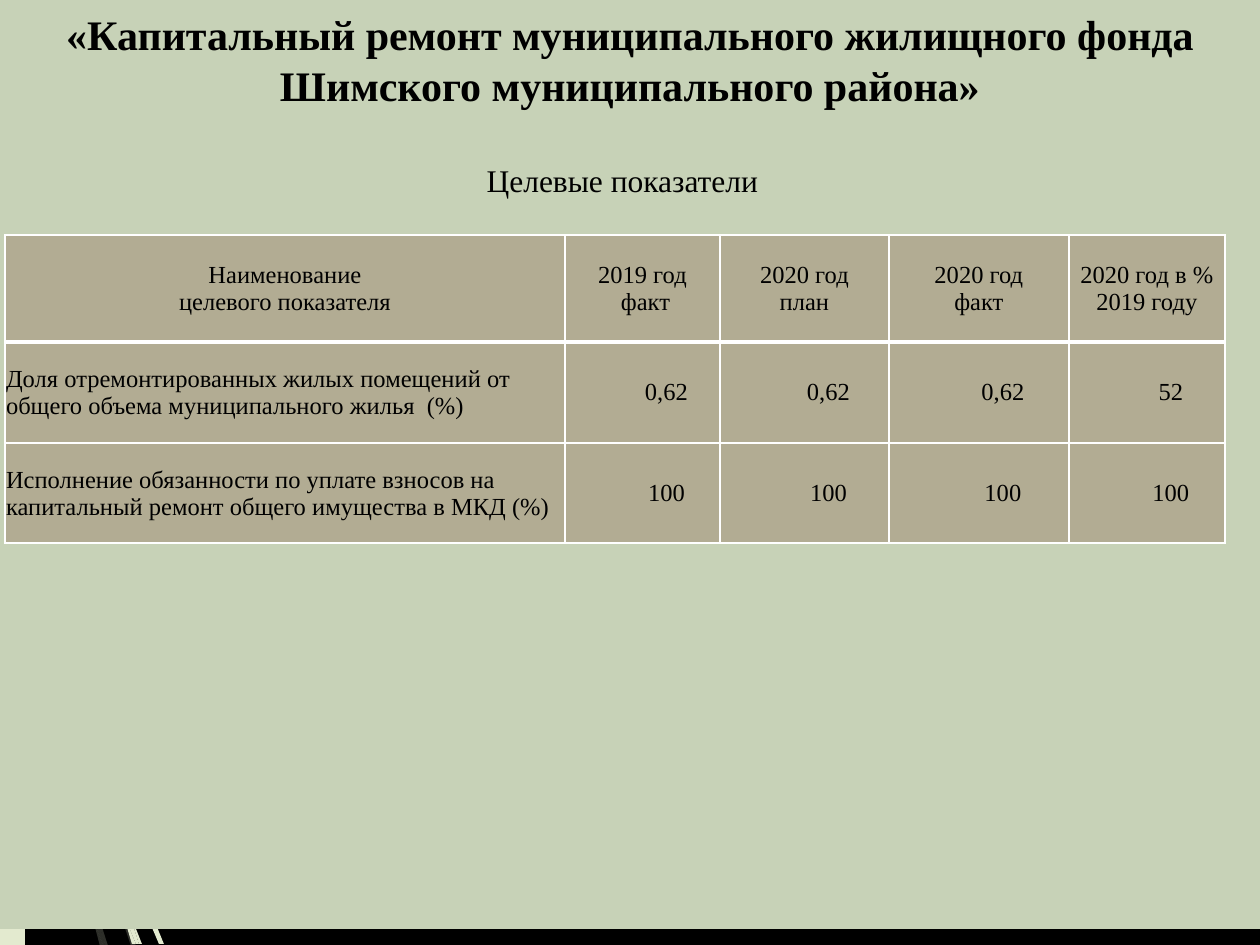
from lxml import etree
from pptx import Presentation
from pptx import util as u
from pptx.dml.color import RGBColor
from pptx.enum import text
from pptx.enum.shapes import MSO_SHAPE
from pptx.oxml.ns import qn

PX = u.Inches(1) // 126
FONT = "Times New Roman"
BLACK = RGBColor(0x00, 0x00, 0x00)
WHITE = RGBColor(0xFF, 0xFF, 0xFF)
CREAM = RGBColor(0xE3, 0xEA, 0xCF)
SAGE = RGBColor(0xC7, 0xD2, 0xB7)
TAUPE = RGBColor(0xB2, 0xAC, 0x93)

TITLE = "«Капитальный ремонт муниципального жилищного фонда Шимского муниципального района»"
COLUMNS = (560, 155, 169, 180, 156)
ROWS = (107, 101, 100)
TABLE = (
    ("Наименование\vцелевого показателя", "2019 год\v факт", "2020 год\nплан",
     "2020 год\nфакт", "2020 год в % 2019 году"),
    ("Доля отремонтированных жилых помещений от общего объема муниципального жилья  (%)",
     "0,62", "0,62", "0,62", "52"),
    ("Исполнение обязанности по уплате взносов на капитальный ремонт общего имущества в МКД (%)",
     "100", "100", "100", "100"),
)
FAINT_BLADES = (
    ((81, 765), (77, 751), (77, 769), (107, 874), (131, 946), (136, 946), (111, 872)),
    ((105, 946), (108, 946), (92, 896)),
    ((88, 900), (100, 946), (103, 946)),
    ((84, 872), (82, 861), (87, 891), (88, 900), (103, 946), (105, 946), (92, 896)),
)
BRIGHT_BLADES = (
    ((118, 818), (115, 808), (115, 827), (137, 892), (159, 944), (164, 944), (142, 890)),
    ((139, 944), (142, 944), (127, 906)),
    ((122, 910), (132, 944), (136, 944)),
    ((121, 890), (115, 871), (121, 903), (122, 910), (136, 944), (139, 944), (127, 906)),
)


def px(*values):
    return [value * PX for value in values]


def paint(shape, color, opacity=100):
    shape.shadow.inherit = False
    shape.line.fill.background()
    shape.fill.solid()
    shape.fill.fore_color.rgb = color
    if opacity < 100:
        srgb = shape.element.spPr.find(qn("a:solidFill"))[0]
        etree.SubElement(srgb, qn("a:alpha"), val=str(opacity * 1000))


def format_text(frame, size, bold=False, align=text.PP_ALIGN.CENTER):
    frame.word_wrap = True
    for para in frame.paragraphs:
        para.alignment = align
        para.font.name = FONT
        para.font.size = u.Pt(size)
        para.font.bold = bold
        para.font.color.rgb = BLACK


def add_blade(page, points, opacity):
    builder = page.shapes.build_freeform(*points[0], scale=PX)
    builder.add_line_segments(points[1:], close=True)
    paint(builder.convert_to_shape(), CREAM, opacity)


def add_decoration(page):
    for blades, opacity in ((FAINT_BLADES, 20), (BRIGHT_BLADES, 100)):
        for points in blades:
            add_blade(page, points, opacity)
    paint(page.shapes.add_shape(MSO_SHAPE.RECTANGLE, *px(0, 0, 25, 945)), CREAM)


def add_title(page):
    """Fill the title panel and lift it above the decoration."""
    title = page.shapes.title
    title.left, title.top, title.width, title.height = px(0, 0, 1260, 929)
    title.fill.solid()
    title.fill.fore_color.rgb = SAGE
    frame = title.text_frame
    frame.text = TITLE
    frame.auto_size = text.MSO_AUTO_SIZE.NONE
    frame.vertical_anchor = text.MSO_ANCHOR.TOP
    frame.margin_top = 9 * PX
    format_text(frame, 24, bold=True)
    title.element.getparent().append(title.element)


def set_borders(cell, widths):
    """Draw white borders; widths are points for left, right, top and bottom."""
    properties = cell._tc.get_or_add_tcPr()
    for index, (side, width) in enumerate(zip("LRTB", widths)):
        line = etree.Element(qn(f"a:ln{side}"), w=str(u.Pt(width)))
        fill = etree.SubElement(line, qn("a:solidFill"))
        etree.SubElement(fill, qn("a:srgbClr"), val=str(WHITE))
        properties.insert(index, line)


def format_cell(cell, row, column):
    is_value = row > 0 and column > 0
    cell.fill.solid()
    cell.fill.fore_color.rgb = TAUPE
    cell.vertical_anchor = text.MSO_ANCHOR.MIDDLE
    margins = (0, 0, 15, 0) if is_value else (1, 1, 1, 0)
    cell.margin_left, cell.margin_top, cell.margin_right, cell.margin_bottom = px(*margins)
    if is_value:
        para = cell.text_frame.paragraphs[0]
        para.level = 1
        properties = para._p.get_or_add_pPr()
        properties.set("marL", str(63 * PX))
        properties.set("indent", "0")
    is_name = row > 0 and column == 0
    format_text(cell.text_frame, 14,
                align=text.PP_ALIGN.LEFT if is_name else text.PP_ALIGN.CENTER)
    set_borders(cell, (1, 1, 3 if row == 1 else 1, 3 if row == 0 else 1))


def add_indicator_table(page):
    box = px(5, 235, sum(COLUMNS), sum(ROWS))
    table = page.shapes.add_table(len(ROWS), len(COLUMNS), *box).table
    for column, width in zip(table.columns, COLUMNS):
        column.width = width * PX
    for row, height in zip(table.rows, ROWS):
        row.height = height * PX
    for row, values in enumerate(TABLE):
        for column, value in enumerate(values):
            cell = table.cell(row, column)
            cell.text = value
            format_cell(cell, row, column)


def add_subtitle(page):
    box = page.shapes.add_textbox(*px(320, 155, 605, 50))
    box.text_frame.text = "Целевые показатели"
    format_text(box.text_frame, 18)


def main():
    deck = Presentation()
    deck.slide_width, deck.slide_height = px(1260, 945)
    page = deck.slides.add_slide(deck.slide_layouts[5])
    page.background.fill.solid()
    page.background.fill.fore_color.rgb = BLACK
    add_decoration(page)
    add_title(page)
    add_indicator_table(page)
    add_subtitle(page)
    deck.save("out.pptx")


if __name__ == "__main__":
    main()
